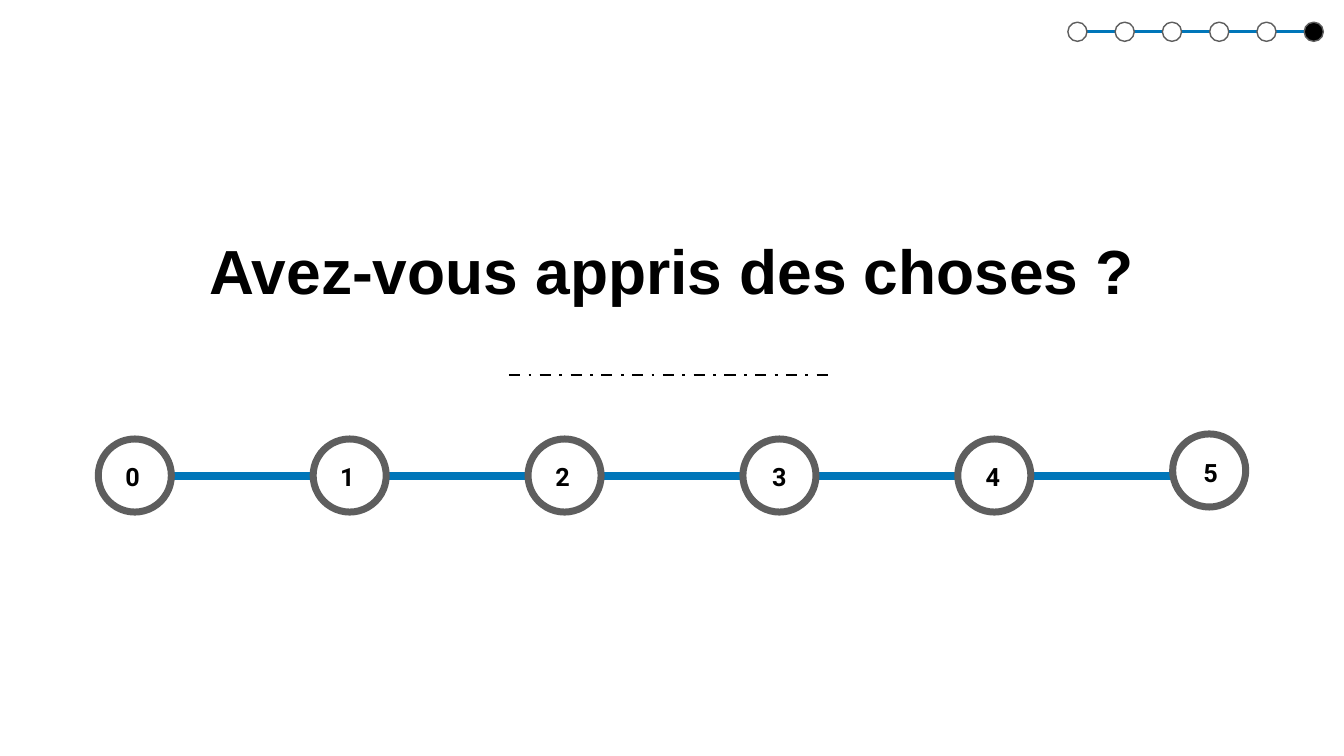
from pptx import Presentation
from pptx.dml.color import RGBColor
from pptx.enum.dml import MSO_LINE
from pptx.enum.shapes import MSO_CONNECTOR, MSO_SHAPE
from pptx.enum.text import MSO_ANCHOR, PP_ALIGN
from pptx.oxml.ns import qn
from pptx.util import Inches, Pt
from lxml import etree

COLORS = {
    name: RGBColor.from_string(code)
    for name, code in {
        "black": "000000", "white": "FFFFFF", "blue": "0076B9", "gray": "5E5E5E",
    }.items()
}

deck = Presentation()
deck.slide_width = Inches(26.67)
deck.slide_height = Inches(15)
slide = deck.slides.add_slide(deck.slide_layouts[6])
scale = slide.shapes
steps = scale.add_group_shape().shapes


def add_ring(parent, left, top, size, width, fill="white"):
    ring = parent.add_shape(
        MSO_SHAPE.OVAL, Inches(left), Inches(top), Inches(size), Inches(size))
    ring.shadow.inherit = False
    ring.fill.solid()
    ring.fill.fore_color.rgb = COLORS[fill]
    ring.line.color.rgb = COLORS["gray"]
    ring.line.width = Pt(width)


def add_text(text, left, top, width, height, font, size, align, anchor):
    box = scale.add_textbox(Inches(left), Inches(top), Inches(width), Inches(height))
    frame = box.text_frame
    frame.word_wrap = True
    frame.vertical_anchor = anchor
    frame.margin_left = frame.margin_right = Inches(0.08)
    frame.margin_top = frame.margin_bottom = Inches(0.08)
    line = frame.paragraphs[0]
    line.alignment = align
    run = line.add_run()
    run.text = text
    run.font.name = font
    run.font.size = Pt(size)
    run.font.bold = True
    run.font.color.rgb = COLORS["black"]


add_text("Avez-vous appris des choses ?", 2.93, 4.44, 20.81, 1.8,
         "Arial", 89, PP_ALIGN.CENTER, MSO_ANCHOR.MIDDLE)

# Lines come first so that the rings cover them
for parent, start, end, y, color, width, dash in [
    (scale, 2.8, 23.93, 9.44, "blue", 12, None),
    (scale, 10.1, 16.57, 7.44, "black", 4, MSO_LINE.DASH_DOT),
    (steps, 21.42, 25.95, 0.63, "blue", 5, None),
]:
    rule = parent.add_connector(
        MSO_CONNECTOR.STRAIGHT, Inches(start), Inches(y), Inches(end), Inches(y))
    rule.line.color.rgb = COLORS[color]
    rule.line.width = Pt(width)
    if dash:
        rule.line.dash_style = dash
    etree.SubElement(rule._element.spPr, qn("a:effectLst"))

# Answer scale from 0 to 5; the last ring sits a little higher
spots = [(2.41, 9.07), (6.67, 9.07), (10.94, 9.07),
         (15.24, 9.08), (19.48, 9.08), (23.8, 9)]
for score, (left, top) in enumerate(spots):
    add_ring(scale, 1.95 + 4.264 * score, 8.61 if score == 5 else 8.71, 1.45, 10)
    add_text(str(score), left, top, 0.53, 0.74,
             "Roboto", 36, PP_ALIGN.LEFT, MSO_ANCHOR.TOP)

# Progress marker, on its last step
for step in range(6):
    add_ring(steps, 21.19 + 0.938 * step, 0.44, 0.38, 2,
             "black" if step == 5 else "white")

deck.save("out.pptx")
